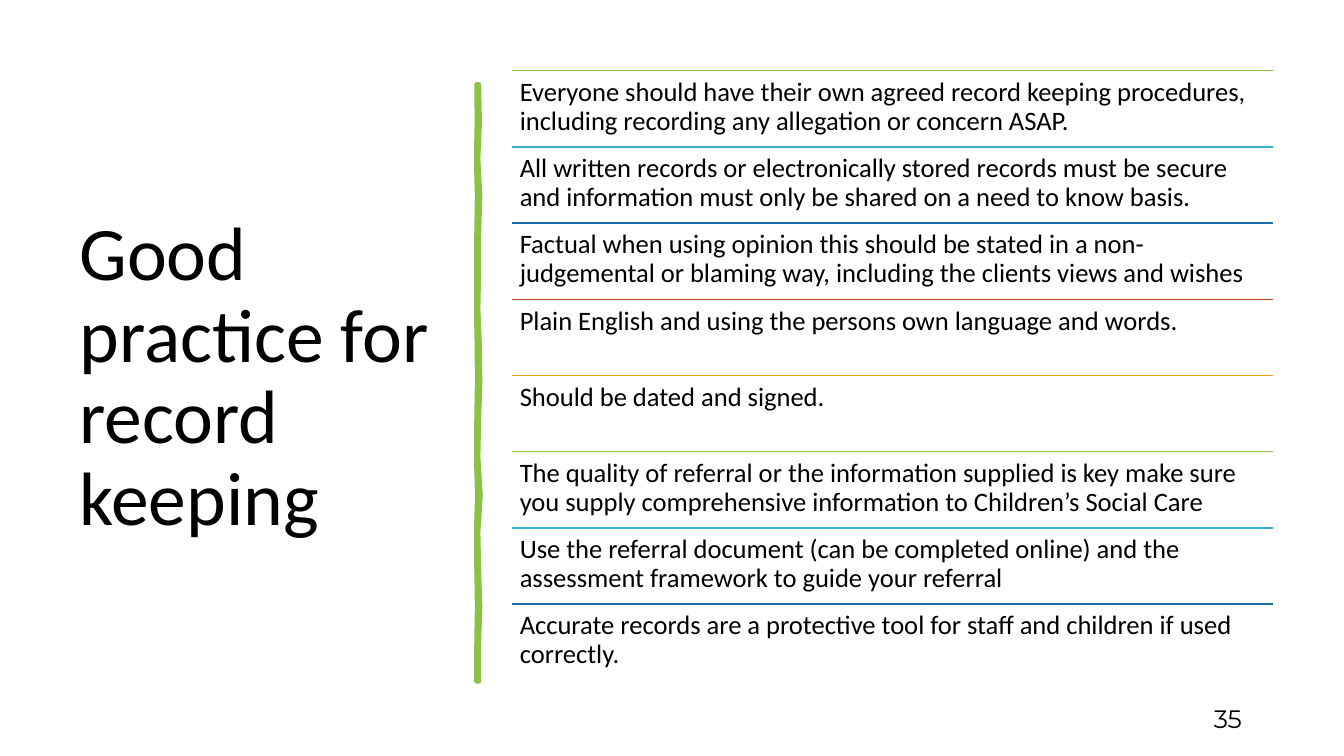
"""Builds the slide on good practice for record keeping."""
import dataclasses

import pptx
import pptx.dml.color
import pptx.enum.shapes
import pptx.enum.text
import pptx.oxml.ns
import pptx.util
from lxml import etree

Cm = pptx.util.Cm
Pt = pptx.util.Pt
Align = pptx.enum.text.PP_ALIGN
Anchor = pptx.enum.text.MSO_ANCHOR


@dataclasses.dataclass(frozen=True)
class Theme:
    """Colours, fonts and type sizes of the slide."""
    ink: str = "000000"
    brush: str = "8BC145"
    rules: tuple = ("8BC145", "36AFCE", "1D6FA9", "B74919", "F19D19")
    body_font: str = "Calibri"
    number_font: str = "Montserrat"
    title_size: float = 54
    practice_size: float = 19
    number_size: float = 18


def rgb(value):
    """Return a colour object for a hex value."""
    return pptx.dml.color.RGBColor.from_string(value)


def format_with(target, values):
    """Set each attribute in a dict of format values."""
    for name, value in values.items():
        setattr(target, name, value)


class SlideBuilder:
    """Holds the theme and the current slide."""

    def __init__(self, slide, theme):
        """Keep the slide and its theme."""
        self.slide = slide
        self.theme = theme

    def fill_text(self, holder, text, font, size, anchor, align=Align.LEFT, after=0, inset=None):
        """Fill a shape with one formatted paragraph."""
        frame = holder.text_frame
        format_with(frame, {"word_wrap": True, "vertical_anchor": anchor,
                            "auto_size": pptx.enum.text.MSO_AUTO_SIZE.NONE})
        if inset is not None:
            sides = ("left", "top", "right", "bottom")
            format_with(frame, {f"margin_{side}": Cm(inset) for side in sides})
        paragraph = frame.paragraphs[0]
        format_with(paragraph, {"alignment": align, "line_spacing": 0.9,
                                "space_after": Pt(after)})
        run = paragraph.add_run()
        run.text = text
        format_with(run.font, {"name": font, "size": Pt(size)})
        run.font.color.rgb = rgb(self.theme.ink)

    def title(self, text, left, top, width, height):
        """Place and format the title placeholder."""
        heading = self.slide.shapes.title
        format_with(heading, {"left": Cm(left), "top": Cm(top),
                              "width": Cm(width), "height": Cm(height)})
        self.fill_text(heading, text, self.theme.body_font,
                       self.theme.title_size, Anchor.MIDDLE)

    def text(self, text, left, top, width, height, **style):
        """Add a text box."""
        box = self.slide.shapes.add_textbox(Cm(left), Cm(top), Cm(width), Cm(height))
        self.fill_text(box, text, **style)

    def rule(self, left, top, width, colour):
        """Add a thin horizontal line."""
        rule = self.slide.shapes.add_connector(
            pptx.enum.shapes.MSO_CONNECTOR.STRAIGHT,
            Cm(left), Cm(top), Cm(left + width), Cm(top))
        rule.line.color.rgb = rgb(colour)
        rule.line.width = Pt(1)
        etree.SubElement(rule._element.spPr, pptx.oxml.ns.qn("a:effectLst"))

    def brush_stroke(self, centre, top, height, sways):
        """Add a hand-drawn vertical stroke that sways along its length."""
        step = height / (len(sways) - 1)
        right = [(Cm(centre + 0.03 + sway), Cm(top + i * step))
                 for i, sway in enumerate(sways)]
        left = [(Cm(centre - 0.03 + sway / 2), Cm(top + i * step))
                for i, sway in enumerate(sways)]
        outline = right + left[::-1]
        freeform = self.slide.shapes.build_freeform(*outline[0])
        freeform.add_line_segments(outline[1:], close=True)
        stroke = freeform.convert_to_shape()
        stroke.shadow.inherit = False
        stroke.fill.solid()
        stroke.fill.fore_color.rgb = rgb(self.theme.brush)
        stroke.line.color.rgb = rgb(self.theme.brush)
        stroke.line.width = Pt(3.25)


PRACTICES = (
    "Everyone should have their own agreed record keeping procedures, "
    "including recording any allegation or concern ASAP.",
    "All written records or electronically stored records must be secure "
    "and information must only be shared on a need to know basis.",
    "Factual when using opinion this should be stated in a non-judgemental "
    "or blaming way, including the clients views and wishes",
    "Plain English and using the persons own language and words.",
    "Should be dated and signed.",
    "The quality of referral or the information supplied is key make sure "
    "you supply comprehensive information to Children’s Social Care",
    "Use the referral document (can be completed online) and the "
    "assessment framework to guide your referral",
    "Accurate records are a protective tool for staff and children if used correctly.",
)
SWAYS = (0, 0.02, -0.02, 0.03, 0, 0, -0.02, 0.02, 0.03,
         0, -0.02, 0.04, -0.02, 0, 0.03, 0, 0)


def main():
    """Build and save the slide."""
    deck = pptx.Presentation()
    format_with(deck, {"slide_width": Cm(33.87), "slide_height": Cm(19.05)})
    theme = Theme()
    builder = SlideBuilder(deck.slides.add_slide(deck.slide_layouts[5]), theme)

    builder.title("Good practice for record keeping", 1.75, 1.78, 9.5, 15.52)
    builder.brush_stroke(12.04, 2.13, 15.04, SWAYS)
    builder.text("35", 23.93, 17.65, 7.62, 1.02, font=theme.number_font,
                 size=theme.number_size, anchor=Anchor.MIDDLE, align=Align.RIGHT, after=6)

    left, top, width, pitch = 12.9, 1.78, 19.18, 1.92
    for row, practice in enumerate(PRACTICES):
        row_top = top + row * pitch
        builder.rule(left, row_top, width, theme.rules[row % len(theme.rules)])
        builder.text(practice, left, row_top, width, pitch, font=theme.body_font,
                     size=theme.practice_size, anchor=Anchor.TOP, after=6.65, inset=0.2)

    deck.save("out.pptx")


if __name__ == "__main__":
    main()
